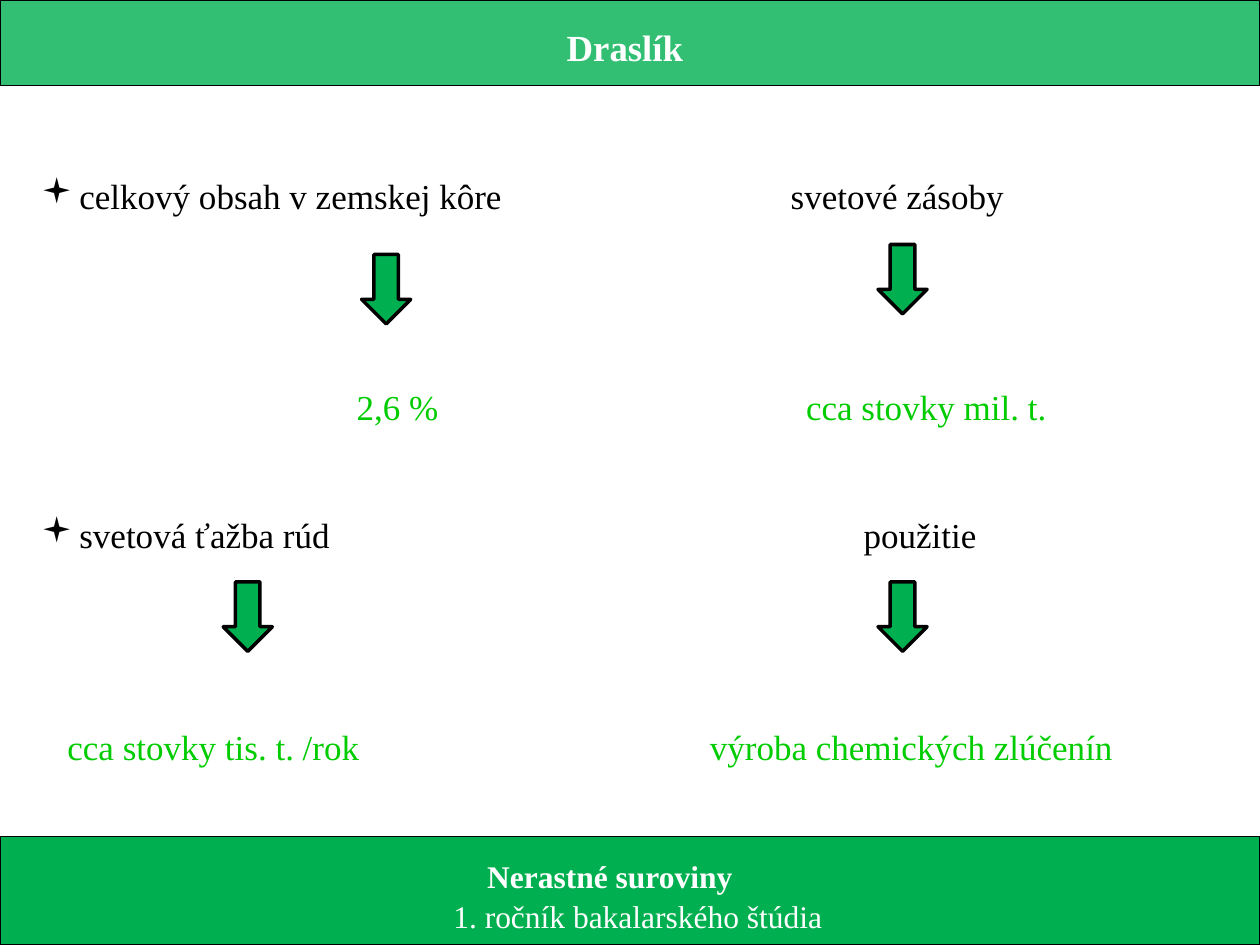
from dataclasses import dataclass

from lxml.etree import SubElement
from pptx import Presentation
from pptx.dml.color import RGBColor
from pptx.enum.shapes import MSO_SHAPE
from pptx.enum.text import MSO_ANCHOR, MSO_AUTO_SIZE, PP_ALIGN
from pptx.oxml.ns import qn
from pptx.util import Cm, Pt

FONT = "Times New Roman"
GREEN, BRIGHT_GREEN = "00B050", "00CC00"
BLACK, WHITE = "000000", "FFFFFF"
ANSWER_GAP, TOPIC_GAP = 97, 49


@dataclass
class Fact:
    topic: str
    answer: str
    topic_indent: float
    answer_indent: float


@dataclass
class Column:
    left: float
    width: float
    facts: list[Fact]
    bulleted: bool


@dataclass
class Arrow:
    left: float
    top: float


COLUMNS = [
    Column(0.58, 12, [
        Fact("celkový obsah v zemskej kôre", "2,6 %", 0.77, 6.36),
        Fact("svetová ťažba rúd", "cca stovky tis. t. /rok", 0.77, 0.53),
    ], True),
    Column(14.06, 10.43, [
        Fact("svetové zásoby", "cca stovky mil. t.", 1.63, 1.94),
        Fact("použitie", "výroba chemických zlúčenín", 3.1, 0),
    ], False),
]
ARROWS = [Arrow(7.29, 5.13), Arrow(17.7, 4.93), Arrow(4.5, 11.73), Arrow(17.7, 11.73)]


def color(value: str) -> RGBColor:
    return RGBColor.from_string(value)


def paint(shape, line_width: float) -> None:
    shape.fill.solid()
    shape.fill.fore_color.rgb = color(GREEN)
    shape.line.color.rgb = color(BLACK)
    shape.line.width = Pt(line_width)


def write(paragraph, text: str, size: float, hue: str, bold: bool = False) -> None:
    paragraph.text = text
    for run in paragraph.runs:
        run.font.name = FONT
        run.font.size = Pt(size)
        run.font.bold = bold
        run.font.color.rgb = color(hue)


def indent(paragraph, left: float = 0, right: float = 0, bullet: str = "") -> None:
    properties = paragraph._p.get_or_add_pPr()
    properties.set("marL", str(Cm(left)))
    properties.set("marR", str(Cm(right)))
    properties.set("indent", str(-Cm(left) if bullet else 0))
    if bullet:
        SubElement(properties, qn("a:buFont"), typeface="Wingdings")
        SubElement(properties, qn("a:buChar"), char=bullet)


def draw_header(title) -> None:
    title.left, title.top, title.width, title.height = Cm(0), Cm(0), Cm(25.4), Cm(1.73)
    paint(title, 0.75)
    fill_color = title.fill._xPr.find(qn("a:solidFill"))[0]
    SubElement(fill_color, qn("a:alpha"), val="80000")
    frame = title.text_frame
    frame.auto_size = MSO_AUTO_SIZE.NONE
    frame.vertical_anchor = MSO_ANCHOR.MIDDLE
    frame.margin_top, frame.margin_bottom = Cm(0.3), Cm(0.13)
    frame.margin_right = Cm(0.46)
    write(frame.paragraphs[0], "Draslík", 21, WHITE, True)
    frame.paragraphs[0].alignment = PP_ALIGN.CENTER


def draw_footer(shapes) -> None:
    band = shapes.add_shape(MSO_SHAPE.RECTANGLE, Cm(0), Cm(16.87), Cm(25.4), Cm(2.18))
    band.shadow.inherit = False
    paint(band, 0.75)
    frame = band.text_frame
    frame.vertical_anchor = MSO_ANCHOR.TOP
    frame.margin_top = Cm(0.41)
    course, year = frame.paragraphs[0], frame.add_paragraph()
    write(course, "Nerastné suroviny", 18, WHITE, True)
    write(year, "1. ročník bakalarského štúdia", 18, WHITE)
    indent(course, right=0.81)
    indent(year, left=0.32)
    course.space_after = Pt(1)
    for paragraph in (course, year):
        paragraph.alignment = PP_ALIGN.CENTER


def draw_column(shapes, column: Column) -> None:
    box = shapes.add_textbox(Cm(column.left), Cm(2.39), Cm(column.width), Cm(13.16))
    frame = box.text_frame
    frame.word_wrap = True
    frame.margin_top = Cm(1.12)
    for number, fact in enumerate(column.facts):
        topic = frame.add_paragraph() if number else frame.paragraphs[0]
        answer = frame.add_paragraph()
        write(topic, fact.topic, 20, BLACK)
        write(answer, fact.answer, 20, BRIGHT_GREEN)
        if number:
            topic.space_before = Pt(TOPIC_GAP)
        answer.space_before = Pt(ANSWER_GAP)
        indent(topic, fact.topic_indent, bullet="▪" if column.bulleted else "")
        indent(answer, fact.answer_indent)


def draw_arrow(shapes, arrow: Arrow) -> None:
    shape = shapes.add_shape(
        MSO_SHAPE.DOWN_ARROW, Cm(arrow.left), Cm(arrow.top), Cm(0.99), Cm(1.4)
    )
    shape.shadow.inherit = False
    paint(shape, 2)
    SubElement(shape.line._get_or_add_ln(), qn("a:round"))


def main() -> None:
    presentation = Presentation()
    presentation.slide_width, presentation.slide_height = Cm(25.4), Cm(19.05)
    slide = presentation.slides.add_slide(presentation.slide_layouts[5])
    draw_header(slide.shapes.title)
    draw_footer(slide.shapes)
    for column in COLUMNS:
        draw_column(slide.shapes, column)
    for arrow in ARROWS:
        draw_arrow(slide.shapes, arrow)
    presentation.save("out.pptx")


if __name__ == "__main__":
    main()
